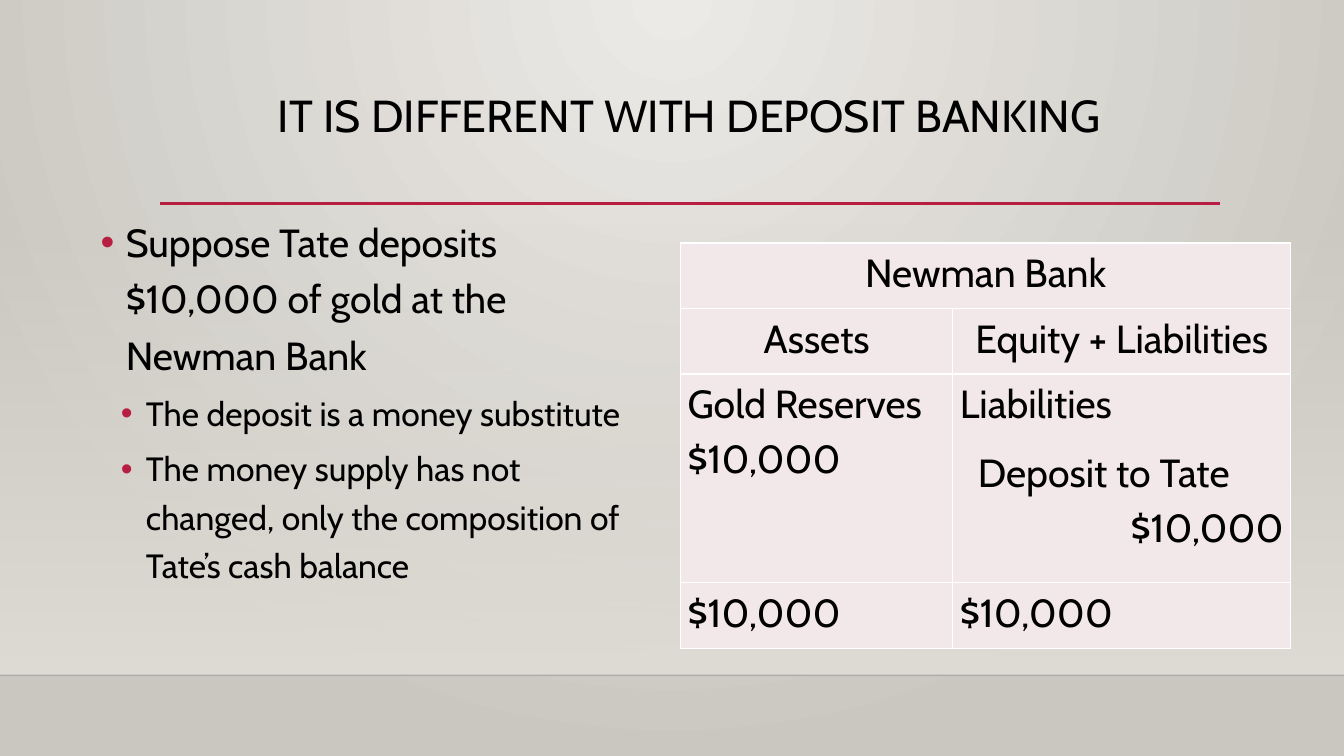
from dataclasses import dataclass
from typing import Any, Optional

from lxml import etree
from pptx import Presentation
from pptx.dml.color import RGBColor
from pptx.enum.shapes import MSO_CONNECTOR, MSO_SHAPE
from pptx.enum.text import MSO_ANCHOR, PP_ALIGN
from pptx.oxml import parse_xml
from pptx.oxml.ns import nsdecls, qn
from pptx.util import Inches, Pt

STRAIGHT = MSO_CONNECTOR.STRAIGHT
RECTANGLE = MSO_SHAPE.RECTANGLE
TOP = MSO_ANCHOR.TOP
LEFT, CENTER, RIGHT = PP_ALIGN.LEFT, PP_ALIGN.CENTER, PP_ALIGN.RIGHT
JUSTIFY = PP_ALIGN.JUSTIFY

FONT = "Cabin"
BLACK = RGBColor(0x00, 0x00, 0x00)
WHITE = RGBColor(0xFF, 0xFF, 0xFF)
CRIMSON = RGBColor(0xB7, 0x1E, 0x42)
FLOOR_EDGE = RGBColor(0x00, 0x00, 0x01)
WALL_LIGHT = RGBColor(0xEC, 0xEA, 0xE7)
WALL_DARK = RGBColor(0xCA, 0xC7, 0xC1)
WALL_HAZE = RGBColor(0xDF, 0xDB, 0xD5)
CELL_PINK = RGBColor(0xF3, 0xE8, 0xE9)


@dataclass
class Para:
    text: str
    size: float = 28
    align: PP_ALIGN = LEFT
    spacing: float = 1.15
    before: float = 0
    after: float = 0
    level: int = 0
    indent: float = 0
    bullet: bool = False


@dataclass
class Rule:
    left: float
    right: float
    y: float
    color: RGBColor
    width: float
    opacity: Optional[int] = None


@dataclass
class Cell:
    row: int
    col: int
    paras: list[Para]


RULES = [
    Rule(0, 13.33, 6.7, FLOOR_EDGE, 1, 20),
    Rule(1.59, 12.1, 2.02, CRIMSON, 2.5),
]
TITLE = [Para("IT IS DIFFERENT WITH DEPOSIT BANKING", 32, CENTER, 0.9)]
SUB_BULLET = {"size": 24, "spacing": 1.2, "before": 5, "level": 1,
              "indent": 0.45, "bullet": True}
BODY = [
    Para("Suppose Tate deposits $10,000 of gold at the Newman Bank",
         spacing=1.2, indent=0.25, bullet=True),
    Para("The deposit is a money substitute", **SUB_BULLET),
    Para("The money supply has not changed, only the composition of "
         "Tate’s cash balance", **SUB_BULLET),
]
COLUMNS = [2.7, 3.35]
ROWS = [0.65, 0.65, 2.07, 0.65]
BALANCE_SHEET = [
    Cell(0, 0, [Para("Newman Bank", align=CENTER, after=10)]),
    Cell(1, 0, [Para("Assets", align=CENTER)]),
    Cell(1, 1, [Para("Equity + Liabilities", align=CENTER)]),
    Cell(2, 0, [Para("Gold Reserves $10,000", after=10)]),
    Cell(2, 1, [Para("Liabilities", align=JUSTIFY, after=10),
                Para("Deposit to Tate", indent=0.18),
                Para("$10,000", align=RIGHT, after=10)]),
    Cell(3, 0, [Para("$10,000", align=JUSTIFY, after=10)]),
    Cell(3, 1, [Para("$10,000", align=JUSTIFY, after=10)]),
]


def apply(target: Any, values: dict[str, Any]) -> None:
    """Set each named attribute of target."""
    for name, value in values.items():
        setattr(target, name, value)


def set_gradient(grad: Any, start: RGBColor, end: RGBColor,
                 shade: str, opacity: int = 100) -> None:
    """Refill a gradFill element; opacity is that of the first stop."""
    for child in list(grad):
        grad.remove(child)
    stops = etree.SubElement(grad, qn("a:gsLst"))
    for pos, color, alpha in ((0, start, opacity), (100, end, 100)):
        stop = etree.SubElement(stops, qn("a:gs"), pos=str(pos * 1000))
        clr = etree.SubElement(stop, qn("a:srgbClr"), val=str(color))
        if alpha < 100:
            etree.SubElement(clr, qn("a:alpha"), val=str(alpha * 1000))
    grad.append(parse_xml(shade))


def draw_backdrop(s: Any) -> None:
    s.background.fill.gradient()
    set_gradient(
        s.element.xpath(".//p:bgPr/a:gradFill")[0], WALL_LIGHT, WALL_DARK,
        f'<a:path {nsdecls("a")} path="circle">'
        '<a:fillToRect l="43000" t="0" r="43000" b="100000"/></a:path>')
    haze = s.shapes.add_shape(RECTANGLE, Inches(0), Inches(2.21),
                              Inches(13.33), Inches(4.49))
    haze.shadow.inherit = False
    haze.line.fill.background()
    haze.fill.gradient()
    set_gradient(haze.element.xpath("./p:spPr/a:gradFill")[0],
                 WALL_HAZE, WALL_HAZE,
                 f'<a:lin {nsdecls("a")} ang="5400000" scaled="0"/>', 0)


def draw_rule(s: Any, rule: Rule) -> None:
    line = s.shapes.add_connector(STRAIGHT, Inches(rule.left), Inches(rule.y),
                                  Inches(rule.right), Inches(rule.y))
    line.line.color.rgb = rule.color
    line.line.width = Pt(rule.width)
    if rule.opacity is not None:
        clr = line.element.xpath("./p:spPr/a:ln//a:srgbClr")[0]
        etree.SubElement(clr, qn("a:alpha"), val=str(rule.opacity * 1000))
    etree.SubElement(line.element.spPr, qn("a:effectLst"))


def write(tf: Any, paras: list[Para]) -> None:
    """Fill a text frame with formatted paragraphs."""
    for i, para in enumerate(paras):
        p = tf.paragraphs[0] if i == 0 else tf.add_paragraph()
        apply(p, {"alignment": para.align, "line_spacing": para.spacing,
                  "space_before": Pt(para.before),
                  "space_after": Pt(para.after), "level": para.level})
        pPr = p._p.get_or_add_pPr()
        pPr.set("marL", str(Inches(para.indent)))
        pPr.set("indent", str(Inches(-0.25 if para.bullet else 0)))
        if para.bullet:
            clr = etree.SubElement(pPr, qn("a:buClr"))
            etree.SubElement(clr, qn("a:srgbClr"), val=str(CRIMSON))
            etree.SubElement(pPr, qn("a:buFont"), typeface="Arial")
            etree.SubElement(pPr, qn("a:buChar"), char="•")
        r = p.add_run()
        r.text = para.text
        apply(r.font, {"name": FONT, "size": Pt(para.size), "bold": False})
        r.font.color.rgb = BLACK


def add_text(s: Any, left: float, top: float, width: float, height: float,
             paras: list[Para]) -> None:
    box = s.shapes.add_textbox(Inches(left), Inches(top),
                               Inches(width), Inches(height))
    apply(box.text_frame, {"word_wrap": True, "vertical_anchor": TOP})
    write(box.text_frame, paras)


def format_cell(cell: Any) -> None:
    apply(cell, {"margin_left": Inches(0.07), "margin_right": Inches(0.07),
                 "margin_top": 0, "margin_bottom": 0, "vertical_anchor": TOP})
    tcPr = cell._tc.get_or_add_tcPr()
    for side in ("lnL", "lnR", "lnT", "lnB"):
        ln = etree.SubElement(tcPr, qn(f"a:{side}"), w=str(Pt(1)))
        fill = etree.SubElement(ln, qn("a:solidFill"))
        etree.SubElement(fill, qn("a:srgbClr"), val=str(WHITE))
    cell.fill.solid()
    cell.fill.fore_color.rgb = CELL_PINK


def draw_balance_sheet(s: Any) -> None:
    table = s.shapes.add_table(len(ROWS), len(COLUMNS), Inches(6.75),
                               Inches(2.41), Inches(sum(COLUMNS)),
                               Inches(sum(ROWS))).table
    apply(table, {"first_row": False, "horz_banding": False})
    for column, width in zip(table.columns, COLUMNS):
        column.width = Inches(width)
    for row, height in zip(table.rows, ROWS):
        row.height = Inches(height)
    for cell in table.iter_cells():
        format_cell(cell)
    table.cell(0, 0).merge(table.cell(0, 1))
    for entry in BALANCE_SHEET:
        write(table.cell(entry.row, entry.col).text_frame, entry.paras)


def main() -> None:
    prs = Presentation()
    apply(prs, {"slide_width": Inches(13.33), "slide_height": Inches(7.5)})
    s = prs.slides.add_slide(prs.slide_layouts[6])
    draw_backdrop(s)
    for rule in RULES:
        draw_rule(s, rule)
    add_text(s, 1.59, 0.88, 10.5, 1.15, TITLE)
    add_text(s, 0.9, 2.02, 5.46, 4.4, BODY)
    draw_balance_sheet(s)
    prs.save("out.pptx")


if __name__ == "__main__":
    main()
